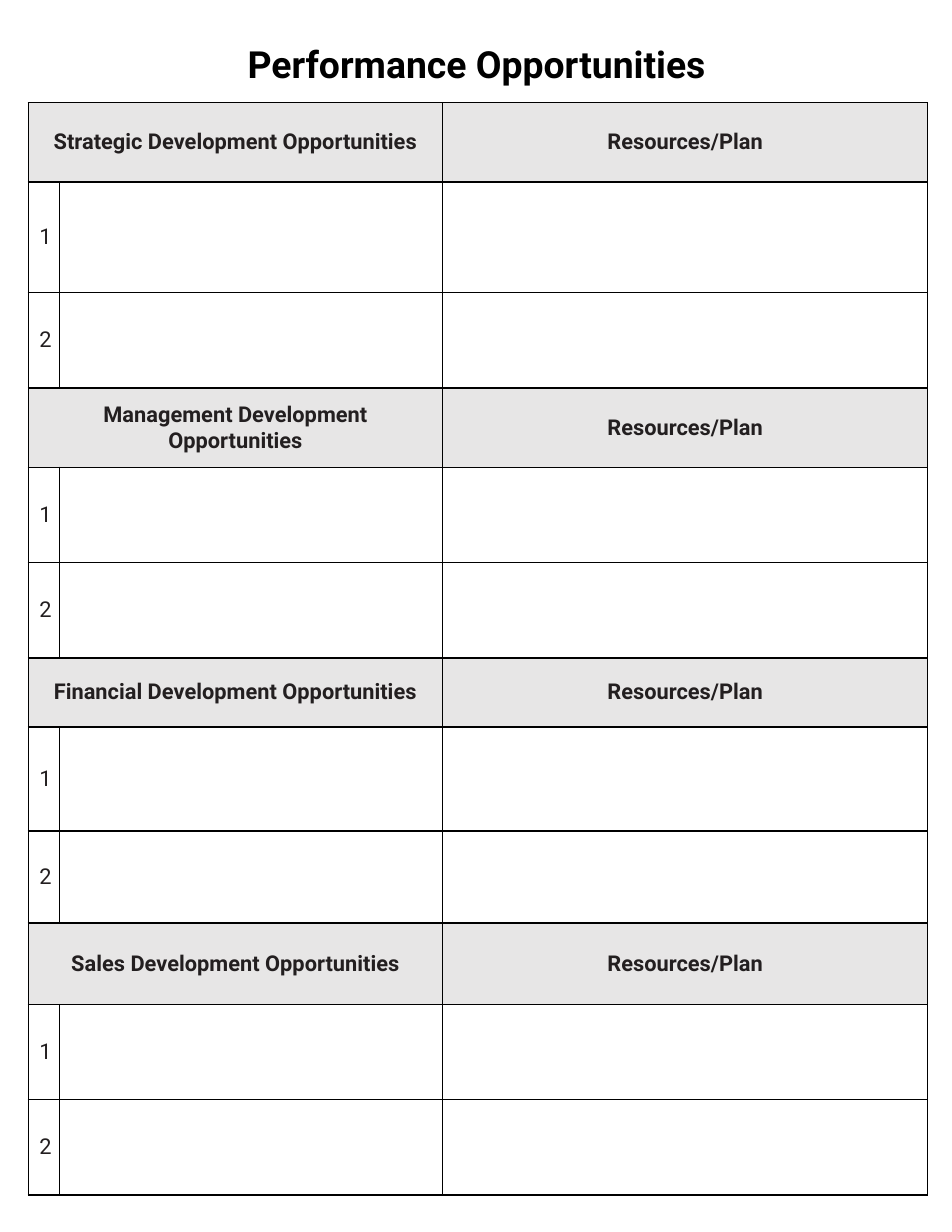
from lxml import etree
from pptx import Presentation
from pptx.dml.color import RGBColor
from pptx.enum import text
from pptx.oxml import ns
from pptx.util import Cm, Pt

FONT = "Roboto"
BLACK, INK, GREY, WHITE = "000000", "231F20", "D0CECE", "FFFFFF"
COL_WIDTHS = [0.71, 8.69, 11]
# Section heading, then the heights of its header row and two entry rows
SECTIONS = [
    ("Strategic Development Opportunities", [1.8, 2.51, 2.16]),
    ("Management Development Opportunities", [1.8, 2.16, 2.16]),
    ("Financial Development Opportunities", [1.57, 2.36, 2.08]),
    ("Sales Development Opportunities", [1.85, 2.16, 2.16]),
]


def rgb(value):
    return RGBColor.from_string(value)


def add_run(p, words, size, color, bold):
    r = p.add_run()
    r.text = words
    r.font.name = FONT
    r.font.size = Pt(size)
    r.font.bold = bold
    r.font.color.rgb = rgb(color)


def add_title(s, words):
    sp = s.shapes.title
    sp.left, sp.top, sp.width, sp.height = Cm(4.55), Cm(0.81), Cm(12.52), Cm(1.27)
    tf = sp.text_frame
    tf.word_wrap = True
    tf.auto_size = text.MSO_AUTO_SIZE.NONE
    tf.vertical_anchor = text.MSO_ANCHOR.TOP
    p = tf.paragraphs[0]
    p.alignment = text.PP_ALIGN.CENTER
    add_run(p, words, 24, BLACK, True)


def set_borders(cell):
    tc_pr = cell._tc.get_or_add_tcPr()
    for side in ("lnL", "lnR", "lnT", "lnB"):
        ln = etree.SubElement(tc_pr, ns.qn(f"a:{side}"), w=str(Pt(1)))
        fill = etree.SubElement(ln, ns.qn("a:solidFill"))
        etree.SubElement(fill, ns.qn("a:srgbClr"), val=BLACK)


def set_fill(cell, color, opacity=100):
    cell.fill.solid()
    cell.fill.fore_color.rgb = rgb(color)
    if opacity < 100:
        clr = cell._tc.tcPr.find(".//" + ns.qn("a:solidFill") + "[last()]/..")
        clr = cell._tc.tcPr.find(ns.qn("a:solidFill")).find(ns.qn("a:srgbClr"))
        etree.SubElement(clr, ns.qn("a:alpha"), val=str(opacity * 1000))


def write_cell(cell, words, bold=False, align=text.PP_ALIGN.LEFT):
    cell.vertical_anchor = text.MSO_ANCHOR.MIDDLE
    p = cell.text_frame.paragraphs[0]
    p.alignment = align
    p.space_before = Pt(2.8)
    add_run(p, words, 14, INK, bold)


def add_header(table, row, heading):
    table.cell(row, 0).merge(table.cell(row, 1))
    for col, words in ((0, heading), (2, "Resources/Plan")):
        cell = table.cell(row, col)
        set_fill(cell, GREY, 50)
        write_cell(cell, words, True, text.PP_ALIGN.CENTER)


def add_entry(table, row, number):
    for col in range(len(COL_WIDTHS)):
        set_fill(table.cell(row, col), WHITE)
    write_cell(table.cell(row, 0), str(number))


def add_plan_table(s):
    heights = [h for _, rows in SECTIONS for h in rows]
    table = s.shapes.add_table(
        len(heights), len(COL_WIDTHS), Cm(0.64), Cm(2.33),
        Cm(sum(COL_WIDTHS)), Cm(sum(heights))).table
    table.first_row = table.horz_banding = False
    for column, width in zip(table.columns, COL_WIDTHS):
        column.width = Cm(width)
    for row, height in zip(table.rows, heights):
        row.height = Cm(height)
    for cell in table.iter_cells():
        set_borders(cell)

    # Each section: one header row, then numbered entry rows
    first = 0
    for heading, rows in SECTIONS:
        add_header(table, first, heading)
        for number in range(1, len(rows)):
            add_entry(table, first + number, number)
        first += len(rows)


def main():
    prs = Presentation()
    prs.slide_width, prs.slide_height = Cm(21.59), Cm(27.94)
    s = prs.slides.add_slide(prs.slide_layouts[5])
    add_title(s, "Performance Opportunities")
    add_plan_table(s)
    prs.save("out.pptx")


if __name__ == "__main__":
    main()
